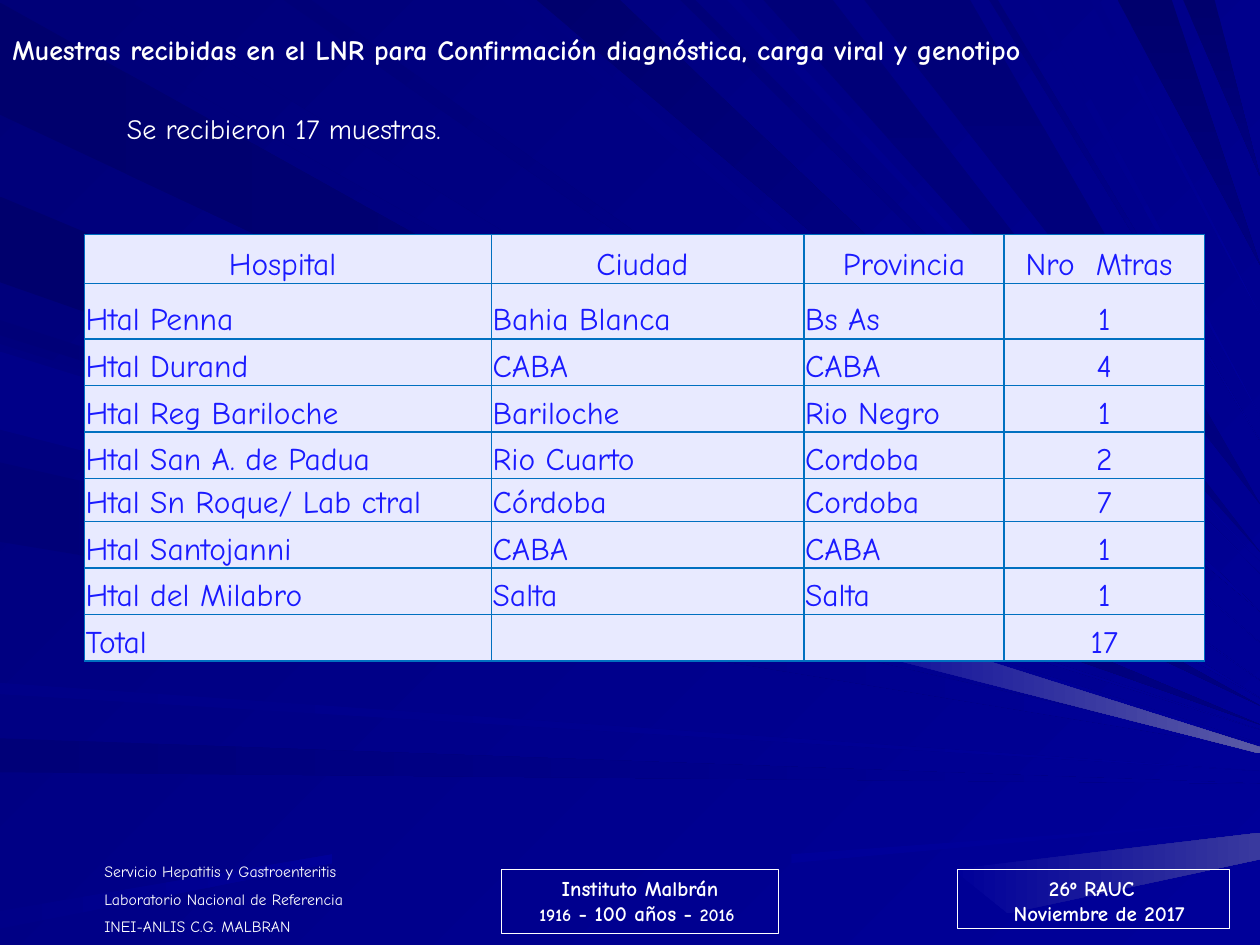
"""Build the slide on samples received by hospital."""
from typing import NamedTuple

from lxml import etree
from pptx import Presentation
from pptx import util as u
from pptx.dml.color import RGBColor
from pptx.enum import shapes, text
from pptx.oxml import ns

FONT = "Comic Neue"
WHITE = RGBColor(0xFF, 0xFF, 0xFF)
DEEP = RGBColor(0x00, 0x00, 0x6D)
DUSK = RGBColor(0x00, 0x00, 0x78)
NAVY = RGBColor(0x00, 0x00, 0x80)
BLUE = RGBColor(0x00, 0x00, 0x88)
ROYAL = RGBColor(0x00, 0x00, 0x99)
HAZE = RGBColor(0x39, 0x39, 0x9E)
GLOW = RGBColor(0x5A, 0x5A, 0xA6)
INK = RGBColor(0x1A, 0x1A, 0xFF)
PALE = RGBColor(0xE8, 0xEA, 0xFF)
EDGE = RGBColor(0x00, 0x70, 0xC0)
LEFT, MID = text.PP_ALIGN.LEFT, text.PP_ALIGN.CENTER
WIDE, HIGH = 10, 7.5


class Ray(NamedTuple):
    near: float
    far: float
    tip: float
    first: RGBColor
    last: RGBColor = ROYAL


class Patch(NamedTuple):
    points: tuple
    first: RGBColor
    last: RGBColor


class Box(NamedTuple):
    left: float
    top: float
    width: float
    height: float


class Note(NamedTuple):
    box: Box
    lines: tuple
    size: int
    bold: bool = False
    align: text.PP_ALIGN = LEFT
    gap: float = 0


SIDE = (
    Ray(0.02, 0.91, 5.6, DEEP, NAVY),
    Ray(5.86, 6.13, 6.22, DUSK),
    Ray(2.54, 2.66, 5.79, DUSK),
    Ray(1.56, 2.24, 5.75, DEEP, NAVY),
    Ray(2.73, 3.37, 5.9, NAVY),
    Ray(3.67, 4.3, 5.95, DUSK),
    Ray(5.42, 5.51, 6.12, BLUE),
)
ROOF = (
    Ray(0.26, 1.01, 5.54, DUSK),
    Ray(3.98, 4.16, 5.1, NAVY),
    Ray(4.26, 4.92, 4.85, DEEP),
    Ray(5.4, 5.52, 4.55, DUSK),
    Ray(6.06, 6.61, 4.38, DUSK, NAVY),
    Ray(8.87, 9.3, 2.1, DEEP, NAVY),
    Ray(9.39, 9.64, 1.4, DEEP, NAVY),
    Ray(2.25, 2.47, 5.4, DUSK),
    Ray(5.77, 5.88, 4.46, BLUE),
    Ray(6.86, 7.7, 4, DUSK, NAVY),
    Ray(7.85, 7.92, 3.5, DUSK),
    Ray(8.15, 8.24, 3.3, BLUE),
    Ray(8.65, 8.72, 2.5, BLUE),
)
FLARES = (
    Patch(((0, 7.23), (0, 7.37), (2.64, 6.85), (2.64, 6.78)), BLUE, ROYAL),
    Patch(((WIDE, 6.51), (6.28, 6.78), (6.28, 6.85)), ROYAL, ROYAL),
    Patch(((WIDE, 6.82), (WIDE, 6.61), (7.56, 6.9), (8, 7.25)), ROYAL, HAZE),
    Patch(((0, 2.79), (0, 3.41), (6.33, 5.03), (6.37, 4.77)), BLUE, ROYAL),
    Patch(((6.37, 4.78), (6.33, 5.04), (WIDE, 5.98), (WIDE, 5.93)), ROYAL, GLOW),
)

NOTES = (
    Note(Box(0.73, 6.79, 2.53, 0.71), ("Servicio Hepatitis y Gastroenteritis",
         "Laboratorio Nacional de Referencia", "INEI-ANLIS C.G. MALBRAN"), 9, gap=5),
    Note(Box(7.63, 6.9, 2.13, 0.5), ("26º RAUC ", " Noviembre de 2017"), 12, True, MID),
    Note(Box(0, 0.21, WIDE, 0.37), (
         "Muestras recibidas en el LNR para Confirmación diagnóstica, carga viral y genotipo",), 16, True),
    Note(Box(0.91, 0.84, 5.2, 0.4), ("Se recibieron 17 muestras.",), 16),
)
DATE = Box(7.6, 6.9, 2.16, 0.47)
HOST = Note(Box(3.98, 6.9, 2.2, 0.51), ("Instituto Malbrán", ""), 12, True, MID)
YEARS = (("1916", 10), (" - 100 años - ", 12), ("2016 ", 10))

GRID = Box(0.67, 1.86, 8.9, 3.39)
COLS = (3.23, 2.48, 1.59, 1.59)
TALL = {0: 0.39, 1: 0.44, 5: 0.34}
CELLS = (
    ("Hospital ", "Ciudad ", "Provincia", "Nro  Mtras "),
    ("Htal Penna", "Bahia Blanca", "Bs As", "1"),
    ("Htal Durand", "CABA", "CABA", "4"),
    ("Htal Reg Bariloche", "Bariloche", "Rio Negro", "1"),
    ("Htal San A. de Padua", "Rio Cuarto", "Cordoba", "2"),
    ("Htal Sn Roque/ Lab ctral", "Córdoba", "Cordoba", "7"),
    ("Htal Santojanni", "CABA", "CABA", "1"),
    ("Htal del Milabro", "Salta", "Salta", "1"),
    ("Total", "", "", "17"),
)


def place(box: Box) -> list:
    return [u.Inches(side) for side in box]


def blend(fill, first: RGBColor, last: RGBColor, angle: int = 0) -> None:
    if first == last:
        fill.solid()
        fill.fore_color.rgb = first
        return
    fill.gradient()
    fill.gradient_angle = -angle % 360
    for stop, color in zip(fill.gradient_stops, (first, last)):
        stop.color.rgb = color


def style(para, size: int, color: RGBColor, bold: bool, align) -> None:
    para.alignment = align
    font = para.font
    font.name, font.size, font.bold = FONT, u.Pt(size), bold
    font.color.rgb = color


def write(frame, note: Note) -> None:
    frame.word_wrap = True
    frame.vertical_anchor = text.MSO_ANCHOR.TOP
    for i, line in enumerate(note.lines):
        para = frame.add_paragraph() if i else frame.paragraphs[0]
        para.text = line
        if i and note.gap:
            para.space_before = u.Pt(note.gap)
        style(para, note.size, WHITE, note.bold, note.align)


def draw_patch(slide, patch: Patch, angle: int = 0) -> None:
    spots = [(u.Inches(x), u.Inches(y)) for x, y in patch.points]
    pen = slide.shapes.build_freeform(*spots[0])
    pen.add_line_segments(spots[1:], close=True)
    shape = pen.convert_to_shape()
    shape.shadow.inherit = False
    shape.line.fill.background()
    blend(shape.fill, patch.first, patch.last, angle)


def draw_rays(slide) -> None:
    for ray in SIDE:
        points = (0, ray.near), (0, ray.far), (WIDE, ray.tip)
        draw_patch(slide, Patch(points, ray.first, ray.last))
    for ray in ROOF:
        points = (ray.near, 0), (ray.far, 0), (WIDE, ray.tip)
        draw_patch(slide, Patch(points, ray.first, ray.last), 90 if ray.last == NAVY else 45)
    for flare in FLARES:
        draw_patch(slide, flare)


def draw_frame(slide, box: Box, width: float):
    shape = slide.shapes.add_shape(shapes.MSO_SHAPE.RECTANGLE, *place(box))
    shape.shadow.inherit = False
    shape.fill.background()
    shape.line.color.rgb = WHITE
    shape.line.width = u.Pt(width)
    return shape


def edge(cell) -> None:
    props = cell._tc.get_or_add_tcPr()
    for side in ("a:lnL", "a:lnR", "a:lnT", "a:lnB"):
        line = etree.SubElement(props, ns.qn(side), w=str(u.Pt(1)))
        fill = etree.SubElement(line, ns.qn("a:solidFill"))
        etree.SubElement(fill, ns.qn("a:srgbClr"), val=str(EDGE))


def draw_table(slide) -> None:
    table = slide.shapes.add_table(len(CELLS), len(COLS), *place(GRID)).table
    table.first_row = table.horz_banding = False
    for col, width in zip(table.columns, COLS):
        col.width = u.Inches(width)
    for r, row in enumerate(table.rows):
        row.height = u.Inches(TALL.get(r, 0.37))
        for c, cell in enumerate(row.cells):
            edge(cell)
            blend(cell.fill, PALE, PALE)
            cell.margin_left = cell.margin_right = cell.margin_top = u.Inches(0.01)
            cell.margin_bottom = 0
            cell.vertical_anchor = text.MSO_ANCHOR.BOTTOM
            cell.text = CELLS[r][c]
            style(cell.text_frame.paragraphs[0], 18, INK, False, MID if r == 0 or c == 3 else LEFT)


def main() -> None:
    deck = Presentation()
    deck.slide_width, deck.slide_height = u.Inches(WIDE), u.Inches(HIGH)
    slide = deck.slides.add_slide(deck.slide_layouts[6])
    blend(slide.background.fill, DUSK, ROYAL, 45)
    draw_rays(slide)
    draw_frame(slide, DATE, 0.75)
    host = draw_frame(slide, HOST.box, 1).text_frame
    write(host, HOST)
    for words, size in YEARS:
        run = host.paragraphs[1].add_run()
        run.text, run.font.size = words, u.Pt(size)
    draw_table(slide)
    for note in NOTES:
        write(slide.shapes.add_textbox(*place(note.box)).text_frame, note)
    deck.save("out.pptx")


if __name__ == "__main__":
    main()
